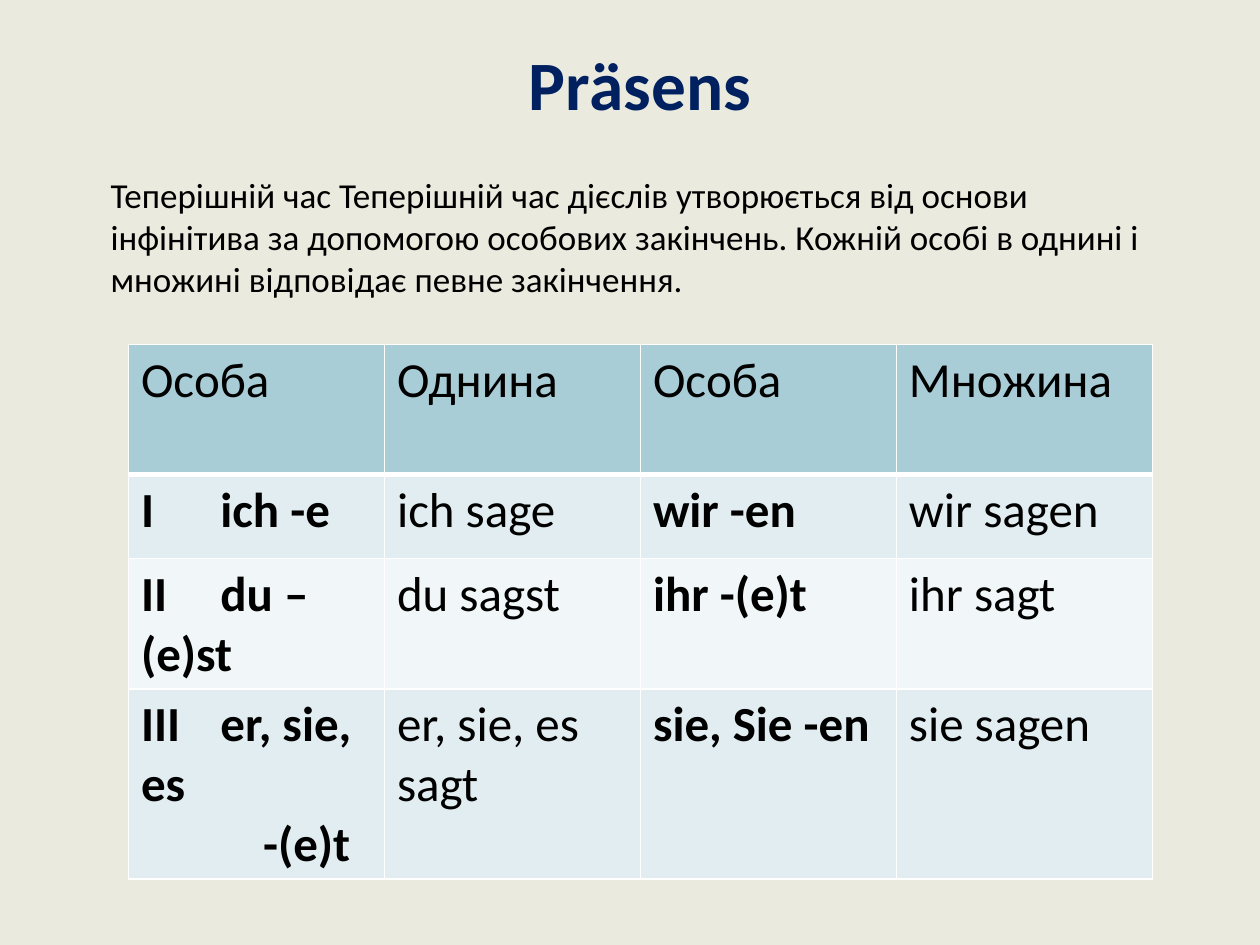
from lxml.etree import SubElement
from pptx import Presentation
from pptx.dml.color import RGBColor
from pptx.enum.text import MSO_ANCHOR, PP_ALIGN
from pptx.oxml.ns import qn
from pptx.util import Cm, Pt

COLORS = {
    "background": "EAEBDE",
    "title": "002060",
    "text": "000000",
    "header": "A8CDD7",
    "odd_row": "E1EDF0",
    "even_row": "F1F6F8",
    "border": "FFFFFF",
}
FONT = "Calibri"
INTRO = (
    "Теперішній час Теперішній час дієслів утворюється від основи "
    "інфінітива за допомогою особових закінчень. Кожній особі в однині і "
    "множині відповідає певне закінчення."
)
# Each line of a cell is a paragraph; a tab parts the person from its pronoun.
CONJUGATION = [
    ["Особа", "Однина", "Особа", "Множина"],
    ["I\tich -e", "ich sage", "wir -en", "wir sagen"],
    ["II\tdu –(e)st", "du sagst", "ihr -(e)t", "ihr sagt"],
    ["III\ter, sie, es\n-(e)t", "er, sie, es sagt", "sie, Sie -en", "sie sagen"],
]
ROW_HEIGHTS = [2.62, 1.7, 2.62, 3.83]
COLUMN_WIDTH = 5.16
PRONOUN_TAB = Cm(1.6)
ENDING_INDENT = Cm(2.46)


def rgb(name):
    return RGBColor.from_string(COLORS[name])


def add_run(paragraph, text, size, color="text", bold=False):
    run = paragraph.add_run()
    run.text = text
    run.font.name = FONT
    run.font.size = Pt(size)
    run.font.bold = bold
    run.font.color.rgb = rgb(color)


def add_title(slide, text):
    title = slide.shapes.title
    title.left, title.top, title.width, title.height = Cm(7.54), Cm(0.76), Cm(10.72), Cm(1.83)
    title.text_frame.vertical_anchor = MSO_ANCHOR.MIDDLE
    paragraph = title.text_frame.paragraphs[0]
    paragraph.alignment = PP_ALIGN.CENTER
    add_run(paragraph, text, 39.6, "title", bold=True)


def add_intro(slide, text):
    intro = slide.shapes.add_textbox(Cm(1.98), Cm(3.38), Cm(21.44), Cm(4.37))
    intro.text_frame.word_wrap = True
    add_run(intro.text_frame.paragraphs[0], text, 20)


def set_borders(cell, bottom_width):
    """Draw all four cell borders; call before filling, as lines come first in tcPr."""
    properties = cell._tc.get_or_add_tcPr()
    for side, width in (("lnL", 1), ("lnR", 1), ("lnT", 1), ("lnB", bottom_width)):
        line = SubElement(properties, qn(f"a:{side}"), w=str(Pt(width)))
        fill = SubElement(line, qn("a:solidFill"))
        SubElement(fill, qn("a:srgbClr"), val=COLORS["border"])


def set_tab_stop(paragraph, position):
    tabs = SubElement(paragraph._p.get_or_add_pPr(), qn("a:tabLst"))
    SubElement(tabs, qn("a:tab"), pos=str(position), algn="l")


def write_cell(cell, text, bold):
    for index, line in enumerate(text.split("\n")):
        frame = cell.text_frame
        paragraph = frame.add_paragraph() if index else frame.paragraphs[0]
        if index:
            paragraph._p.get_or_add_pPr().set("marL", str(ENDING_INDENT))
        if "\t" in line:
            set_tab_stop(paragraph, PRONOUN_TAB)
        add_run(paragraph, line, 28, bold=bold)


def add_conjugation_table(slide):
    columns = len(CONJUGATION[0])
    table = slide.shapes.add_table(
        len(CONJUGATION), columns, Cm(2.59), Cm(6.94),
        Cm(COLUMN_WIDTH * columns), Cm(sum(ROW_HEIGHTS)),
    ).table
    for column in table.columns:
        column.width = Cm(COLUMN_WIDTH)
    for r, (texts, height) in enumerate(zip(CONJUGATION, ROW_HEIGHTS)):
        table.rows[r].height = Cm(height)
        is_header = r == 0
        row_color = "header" if is_header else "odd_row" if r % 2 else "even_row"
        for c, text in enumerate(texts):
            cell = table.cell(r, c)
            set_borders(cell, 3 if is_header else 1)
            cell.fill.solid()
            cell.fill.fore_color.rgb = rgb(row_color)
            write_cell(cell, text, bold=not is_header and c % 2 == 0)


def main():
    presentation = Presentation()
    presentation.slide_width, presentation.slide_height = Cm(25.4), Cm(19.05)
    slide = presentation.slides.add_slide(presentation.slide_layouts[5])
    slide.background.fill.solid()
    slide.background.fill.fore_color.rgb = rgb("background")
    add_title(slide, "Prӓsens")
    add_intro(slide, INTRO)
    add_conjugation_table(slide)
    presentation.save("out.pptx")


if __name__ == "__main__":
    main()
